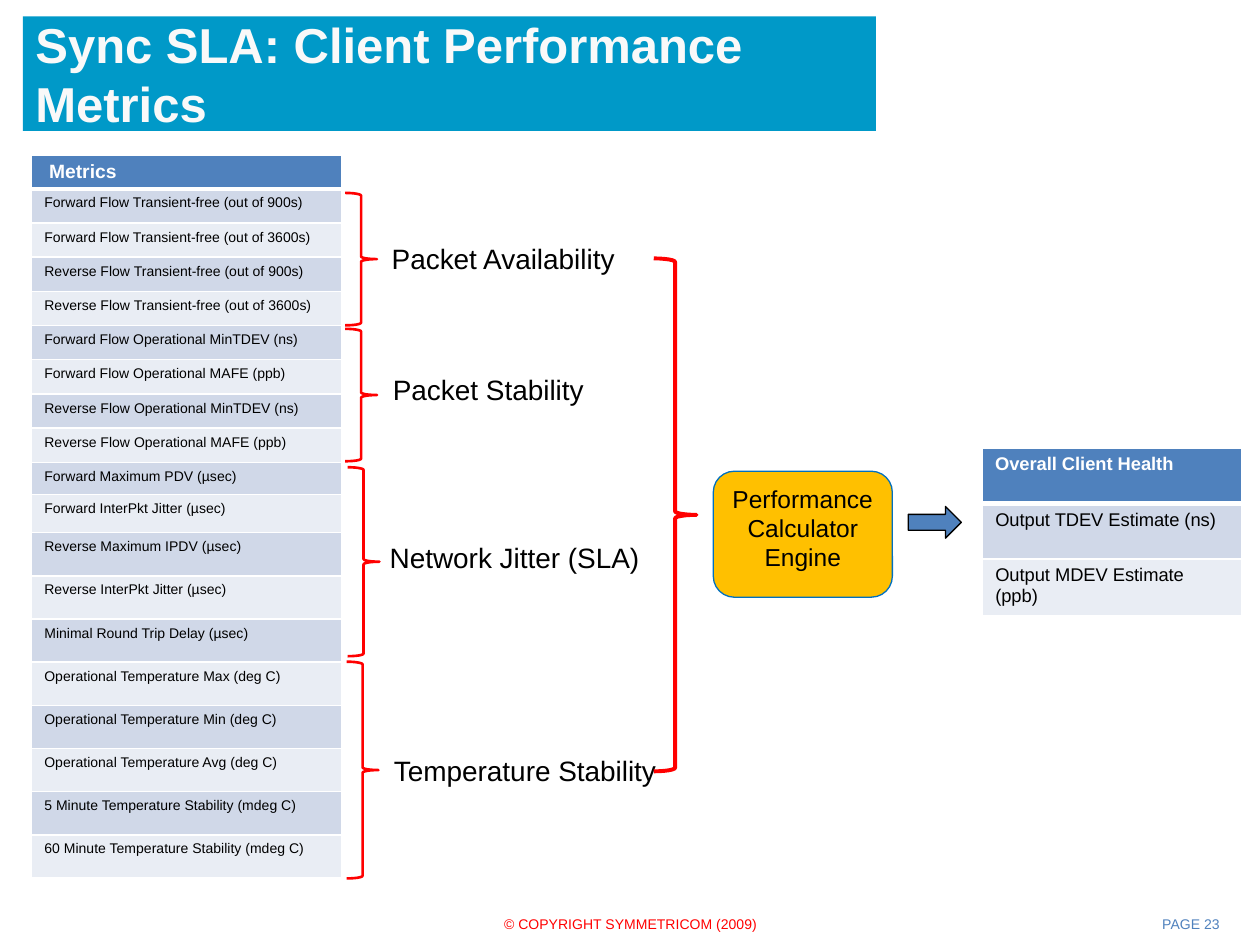
from dataclasses import dataclass

import pptx
import pptx.dml.color
import pptx.enum.shapes
import pptx.enum.text
import pptx.oxml
import pptx.oxml.ns
import pptx.util

Cm = pptx.util.Cm
Pt = pptx.util.Pt
ALIGN = pptx.enum.text.PP_ALIGN
ANCHOR = pptx.enum.text.MSO_ANCHOR
SHAPE = pptx.enum.shapes.MSO_SHAPE

FONT = "Arial"
COLORS = {
    "title_bar": "0099C8", "title_text": "F9F9F9", "accent": "4F81BD",
    "band_dark": "D0D8E8", "band_light": "E9EDF4", "engine": "FFC000",
    "engine_line": "0070C0", "red": "FF0000", "black": "000000", "white": "FFFFFF",
}


@dataclass(frozen=True)
class Box:
    """Position and size in centimetres."""
    left: float
    top: float
    width: float
    height: float

    def lengths(self) -> tuple:
        return Cm(self.left), Cm(self.top), Cm(self.width), Cm(self.height)


@dataclass(frozen=True)
class MetricGroup:
    label: str
    label_box: Box
    brace: Box
    metrics: tuple
    row_heights: tuple


GROUPS = [
    MetricGroup(
        "Packet Availability", Box(7.62, 4.75, 5.05, 0.94), Box(6.96, 3.89, 0.64, 2.67),
        ("Forward Flow Transient-free (out of 900s)",
         "Forward Flow Transient-free (out of 3600s)",
         "Reverse Flow Transient-free (out of 900s)",
         "Reverse Flow Transient-free (out of 3600s)"),
        (0.69,) * 4),
    MetricGroup(
        "Packet Stability", Box(7.65, 7.39, 4.39, 0.94), Box(6.96, 6.63, 0.64, 2.67),
        ("Forward Flow Operational MinTDEV (ns)",
         "Forward Flow Operational MAFE (ppb)",
         "Reverse Flow Operational MinTDEV (ns)",
         "Reverse Flow Operational MAFE (ppb)"),
        (0.69,) * 4),
    MetricGroup(
        "Network Jitter (SLA)", Box(7.57, 10.77, 5.61, 0.94), Box(7.01, 9.42, 0.64, 3.81),
        ("Forward Maximum PDV (µsec)",
         "Forward InterPkt Jitter (µsec)",
         "Reverse Maximum IPDV (µsec)",
         "Reverse InterPkt Jitter (µsec)",
         "Minimal Round Trip Delay (µsec)"),
        (0.65, 0.77) + (0.87,) * 3),
    MetricGroup(
        "Temperature Stability", Box(7.65, 15.06, 5.87, 0.94), Box(6.99, 13.34, 0.64, 4.37),
        ("Operational Temperature Max (deg C)",
         "Operational Temperature Min (deg C)",
         "Operational Temperature Avg (deg C)",
         "5 Minute Temperature Stability (mdeg C)",
         "60 Minute Temperature Stability (mdeg C)"),
        (0.87,) * 5),
]


def rgb(name: str) -> pptx.dml.color.RGBColor:
    return pptx.dml.color.RGBColor.from_string(COLORS[name])


def write(frame, text: str, size: float, color: str, align=ALIGN.LEFT, bold: bool = False) -> None:
    paragraph = frame.paragraphs[0]
    paragraph.alignment = align
    run = paragraph.add_run()
    run.text = text
    run.font.name = FONT
    run.font.size = Pt(size)
    run.font.bold = bold
    run.font.color.rgb = rgb(color)


def add_label(slide, box: Box, text: str, size: float, color: str, align=ALIGN.CENTER,
              wrap: bool = True) -> None:
    frame = slide.shapes.add_textbox(*box.lengths()).text_frame
    frame.word_wrap = wrap
    write(frame, text, size, color, align)


def add_figure(slide, kind, box: Box, line: str, line_width: float, fill: str = ""):
    figure = slide.shapes.add_shape(kind, *box.lengths())
    figure.shadow.inherit = False
    if fill:
        figure.fill.solid()
        figure.fill.fore_color.rgb = rgb(fill)
    else:
        figure.fill.background()
    figure.line.color.rgb = rgb(line)
    figure.line.width = Pt(line_width)
    return figure


def add_brace(slide, box: Box, line_width: float = 1.5) -> None:
    add_figure(slide, SHAPE.RIGHT_BRACE, box, "red", line_width)


def set_borders(cell, top: float, bottom: float) -> None:
    widths = {"lnL": 1, "lnR": 1, "lnT": top, "lnB": bottom}
    properties = cell._tc.get_or_add_tcPr()
    for position, (side, width) in enumerate(widths.items()):
        border = pptx.oxml.parse_xml(
            f'<a:{side} {pptx.oxml.ns.nsdecls("a")} w="{int(Pt(width))}"><a:solidFill>'
            f'<a:srgbClr val="{COLORS["white"]}"/></a:solidFill></a:{side}>')
        properties.insert(position, border)


def add_banded_table(slide, left: float, top: float, width: float, texts: list, heights: list,
                     header_size: float, body_size: float, header_indent: float = 0):
    box = Box(left, top, width, sum(heights))
    table = slide.shapes.add_table(len(texts), 1, *box.lengths()).table
    table.columns[0].width = Cm(width)
    for index, (text, height) in enumerate(zip(texts, heights)):
        table.rows[index].height = Cm(height)
        cell = table.cell(index, 0)
        header = index == 0
        cell.fill.solid()
        cell.fill.fore_color.rgb = rgb(
            "accent" if header else "band_dark" if index % 2 else "band_light")
        set_borders(cell, 3 if index == 1 else 1, 3 if header else 1)
        if header:
            cell.margin_left = Cm(0.25 + header_indent)
            write(cell.text_frame, text, header_size, "white", bold=True)
        else:
            write(cell.text_frame, text, body_size, "black")


def main() -> None:
    deck = pptx.Presentation()
    deck.slide_width, deck.slide_height = Cm(25.4), Cm(19.05)
    slide = deck.slides.add_slide(deck.slide_layouts[5])

    # Title bar
    title = slide.shapes.title
    title.left, title.top, title.width, title.height = Box(0.46, 0.33, 17.2, 2.31).lengths()
    title.fill.solid()
    title.fill.fore_color.rgb = rgb("title_bar")
    title.text_frame.auto_size = pptx.enum.text.MSO_AUTO_SIZE.NONE
    title.text_frame.vertical_anchor = ANCHOR.MIDDLE
    write(title.text_frame, "Sync SLA: Client Performance Metrics", 28, "title_text", bold=True)

    # Metrics table
    metrics = ["Metrics"] + [metric for group in GROUPS for metric in group.metrics]
    heights = [0.68] + [height for group in GROUPS for height in group.row_heights]
    add_banded_table(slide, 0.64, 3.12, 6.25, metrics, heights, 11, 8, header_indent=0.1)

    # Metric groups, gathered by the large brace
    for group in GROUPS:
        add_brace(slide, group.brace)
        add_label(slide, group.label_box, group.label, 16, "black", wrap=False)
    add_brace(slide, Box(13.18, 5.21, 0.86, 10.34), 2.25)

    # Calculator engine and its output
    engine = add_figure(slide, SHAPE.ROUNDED_RECTANGLE, Box(14.38, 9.5, 3.61, 2.54),
                        "engine_line", 0.75, "engine")
    engine.text_frame.word_wrap = True
    engine.text_frame.vertical_anchor = ANCHOR.TOP
    write(engine.text_frame, "Performance Calculator Engine", 14, "black", ALIGN.CENTER)
    add_figure(slide, SHAPE.RIGHT_ARROW, Box(18.31, 10.21, 1.07, 0.64), "black", 0.75, "accent")
    health = ["Overall Client Health", "Output TDEV Estimate (ns)", "Output MDEV Estimate (ppb)"]
    add_banded_table(slide, 19.81, 9.03, 5.23, health, [1.12] * len(health), 10.5, 10.5)

    # Footer
    add_label(slide, Box(8.69, 18.34, 8.05, 0.58), "© COPYRIGHT SYMMETRICOM (2009)", 8, "red")
    add_label(slide, Box(18.92, 18.34, 5.92, 0.58), "PAGE 23", 8, "accent", ALIGN.RIGHT)

    deck.save("out.pptx")


if __name__ == "__main__":
    main()
